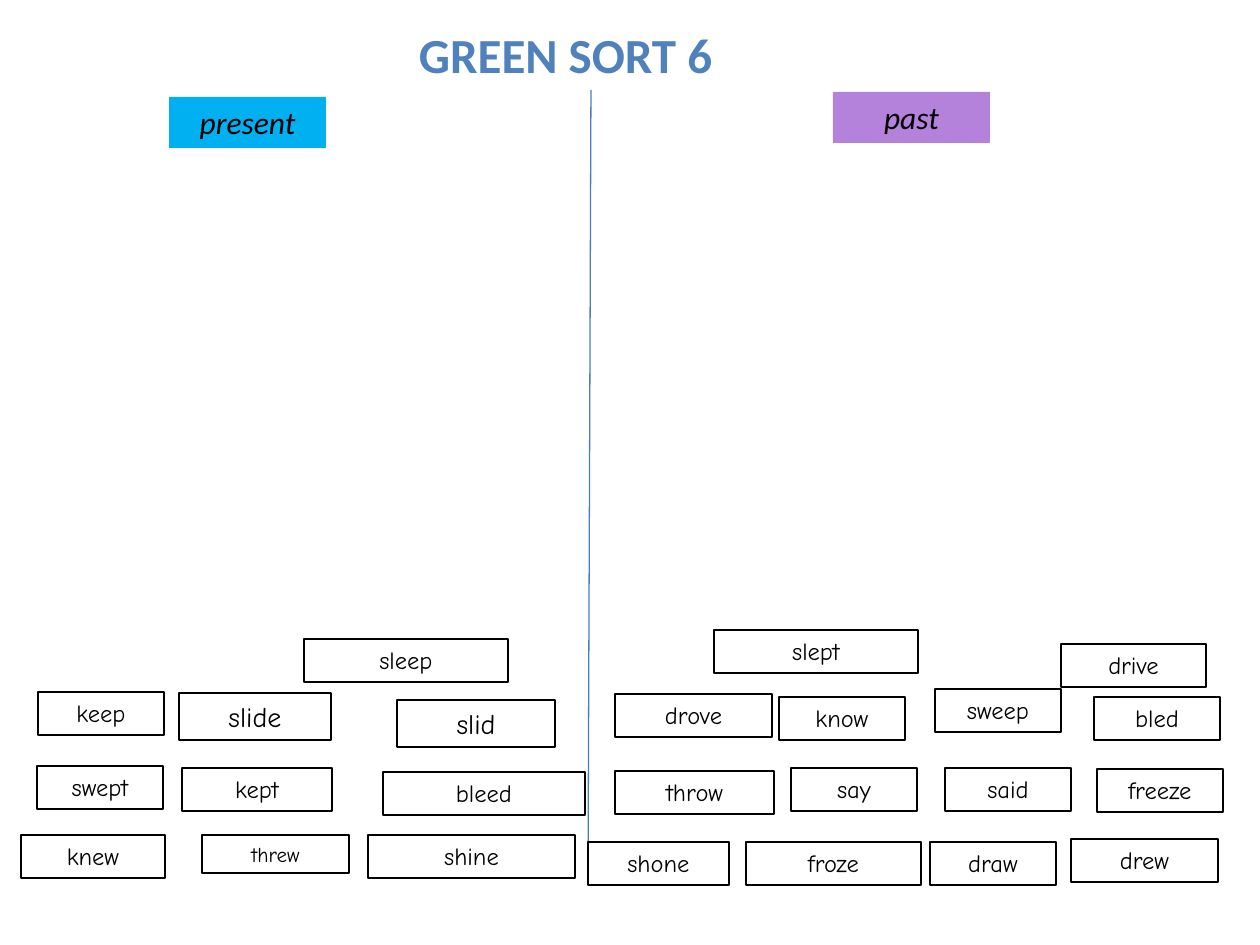
from lxml.etree import SubElement
from pptx import Presentation
from pptx.dml.color import RGBColor
from pptx.enum.shapes import MSO_CONNECTOR
from pptx.enum.text import MSO_ANCHOR, MSO_AUTO_SIZE, PP_ALIGN
from pptx.oxml.ns import qn
from pptx.util import Emu, Pt

EMU_PER_PX = 914400 / 126
HEIGHT_BY_SIZE = {12: 38, 14: 43, 16: 47, 18: 51}

HEADINGS = [
    ("present", 169, 97, "00B0F0"),
    ("past", 833, 92, "B482DA"),
]

WORD_CARDS = [
    ("sleep", 304, 639, 204, 14),
    ("slept", 714, 630, 204, 14),
    ("drive", 1061, 644, 145, 14),
    ("keep", 38, 692, 126, 14),
    ("slide", 179, 693, 152, 16),
    ("slid", 397, 700, 158, 16),
    ("drove", 615, 694, 157, 14),
    ("know", 779, 697, 126, 14),
    ("sweep", 935, 689, 126, 14),
    ("bled", 1094, 697, 126, 14),
    ("swept", 37, 766, 126, 14),
    ("kept", 182, 768, 150, 14),
    ("bleed", 383, 772, 202, 14),
    ("throw", 615, 771, 159, 14),
    ("say", 791, 768, 126, 14),
    ("said", 945, 768, 126, 14),
    ("freeze", 1097, 769, 126, 14),
    ("knew", 21, 835, 144, 14),
    ("threw", 202, 835, 147, 12),
    ("shine", 368, 835, 207, 14),
    ("shone", 588, 842, 141, 14),
    ("froze", 746, 842, 175, 14),
    ("draw", 930, 842, 126, 14),
    ("drew", 1071, 839, 147, 14),
]


def px(length):
    return Emu(round(length * EMU_PER_PX))


def color(value):
    return RGBColor.from_string(value)


def write(box, text, size, font_name, text_color="000000", bold=False, italic=False):
    frame = box.text_frame
    frame.text = text
    frame.word_wrap = True
    frame.auto_size = MSO_AUTO_SIZE.SHAPE_TO_FIT_TEXT
    frame.vertical_anchor = MSO_ANCHOR.TOP
    para = frame.paragraphs[0]
    para.alignment = PP_ALIGN.CENTER
    font = para.runs[0].font
    font.name = font_name
    font.size = Pt(size)
    font.bold = bold
    font.italic = italic
    font.color.rgb = color(text_color)


def set_title(page, text):
    title = page.shapes.title
    title.left, title.top, title.width, title.height = map(px, (275, 18, 581, 72))
    write(title, text, 28, "Calibri", "4F81BD", bold=True)


def add_divider(page):
    divider = page.shapes.add_connector(
        MSO_CONNECTOR.STRAIGHT, px(591), px(90), px(588), px(883)
    )
    divider.line.color.rgb = color("4B7EBC")
    divider.line.width = Pt(0.75)
    SubElement(divider._element.spPr, qn("a:effectLst"))


def add_heading(page, text, left, top, fill):
    box = page.shapes.add_textbox(px(left), px(top), px(157), px(HEIGHT_BY_SIZE[18]))
    box.fill.solid()
    box.fill.fore_color.rgb = color(fill)
    write(box, text, 18, "Calibri", italic=True)


def add_word_card(page, word, left, top, width, size):
    box = page.shapes.add_textbox(px(left), px(top), px(width), px(HEIGHT_BY_SIZE[size]))
    box.line.color.rgb = color("000000")
    box.line.width = Pt(0.75)
    write(box, word, size, "Comic Neue")


def main():
    deck = Presentation()
    deck.slide_width, deck.slide_height = px(1260), px(945)
    page = deck.slides.add_slide(deck.slide_layouts[5])
    set_title(page, "GREEN SORT 6")
    add_divider(page)
    for heading in HEADINGS:
        add_heading(page, *heading)
    for card in WORD_CARDS:
        add_word_card(page, *card)
    deck.save("out.pptx")


if __name__ == "__main__":
    main()
